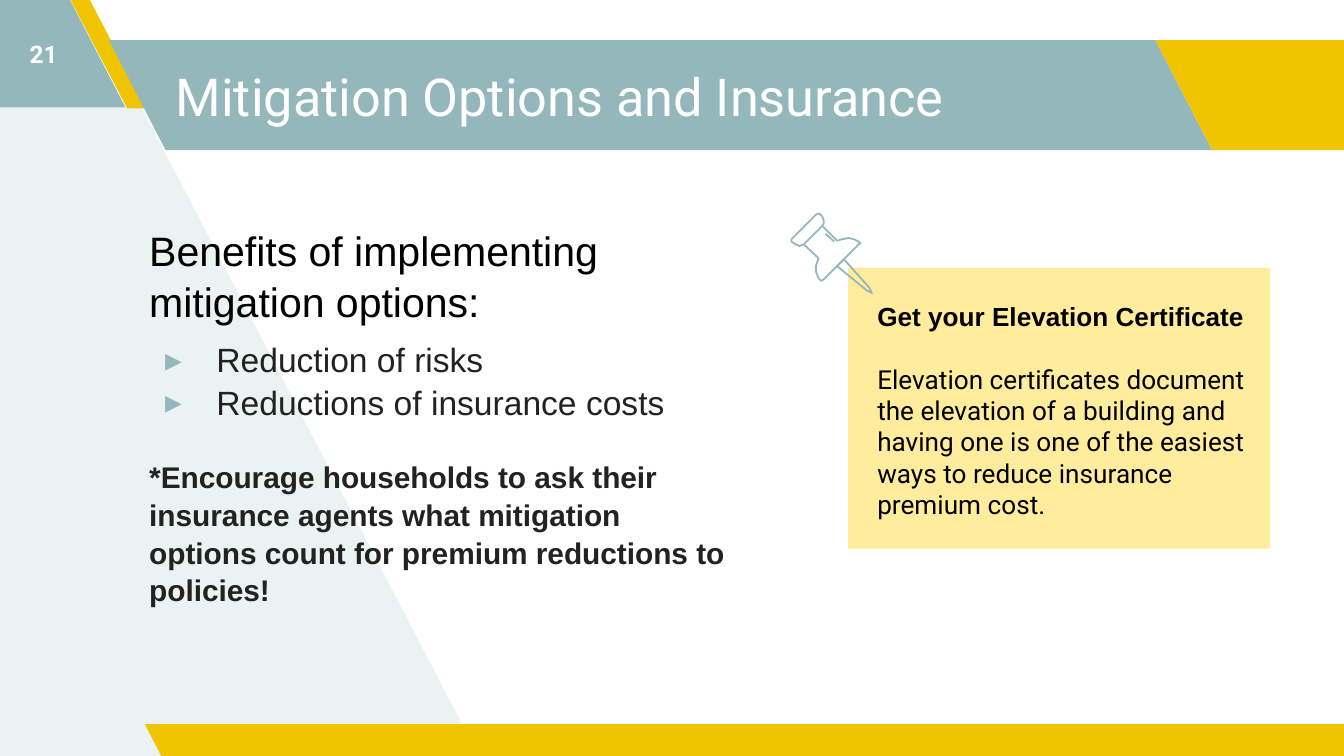
"""Build the slide on mitigation options and insurance."""
import lxml.etree
import pptx
import pptx.dml.color
import pptx.enum.shapes
import pptx.enum.text
import pptx.oxml.ns
import pptx.util

Cm = pptx.util.Cm
Pt = pptx.util.Pt
RGBColor = pptx.dml.color.RGBColor
qn = pptx.oxml.ns.qn

TEAL = RGBColor(0x94, 0xB7, 0xBB)
PIN_TEAL = RGBColor(0x94, 0xB8, 0xBD)
GOLD = RGBColor(0xF1, 0xC4, 0x00)
NOTE_YELLOW = RGBColor(0xFF, 0xEC, 0x9D)
WHITE = RGBColor(0xFF, 0xFF, 0xFF)
BLACK = RGBColor(0x00, 0x00, 0x00)
CHARCOAL = RGBColor(0x22, 0x22, 0x22)


def draw_outline(shapes, points, closed):
    builder = shapes.build_freeform(*points[0], scale=Cm(0.01))
    builder.add_line_segments(points[1:], close=closed)
    outline = builder.convert_to_shape()
    outline.shadow.inherit = False
    return outline


def format_text(paragraph, font_name, size, color, bold=False):
    for run in paragraph.runs:
        run.font.name = font_name
        run.font.size = Pt(size)
        run.font.color.rgb = color
        run.font.bold = bold


deck = pptx.Presentation()
deck.slide_width = Cm(25.4)
deck.slide_height = Cm(14.29)
slide = deck.slides.add_slide(deck.slide_layouts[1])
shapes = slide.shapes

wedge = draw_outline(shapes, [(904, 1428), (157, -10), (-15, -10), (-5, 1438)], True)
wedge.fill.solid()
wedge.fill.fore_color.rgb = TEAL
wedge.line.fill.background()
wedge_color = wedge.fill._xPr.find(qn("a:solidFill"))[0]
lxml.etree.SubElement(wedge_color, qn("a:alpha"), val="18000")

bands = [
    (-2.51, -0.05, 4.88, 2.08, 0.515, TEAL),
    (1.32, -0.03, 1.45, 2.08, 0.75, GOLD),
    (2.06, 0.76, 20.85, 2.08, 0.515, TEAL),
    (21.84, 0.76, 4.88, 2.08, 0.515, GOLD),
    (2.74, 13.69, 23.24, 0.64, 0.515, GOLD),
]
for left, top, width, height, slant, color in bands:
    band = shapes.add_shape(
        pptx.enum.shapes.MSO_SHAPE.PARALLELOGRAM,
        Cm(left), Cm(top), Cm(width), Cm(height))
    band.adjustments[0] = slant
    band.element.spPr.find(qn("a:xfrm")).set("flipH", "1")
    band.shadow.inherit = False
    band.fill.solid()
    band.fill.fore_color.rgb = color
    band.line.fill.background()

title = shapes.title
benefits = slide.placeholders[1]
for placeholder in (title, benefits):
    shapes.element.append(placeholder.element)

page_number = shapes.add_textbox(Cm(0), Cm(0), Cm(1.65), Cm(2.03))

certificate_card = shapes.add_shape(
    pptx.enum.shapes.MSO_SHAPE.RECTANGLE, Cm(16.03), Cm(5.06), Cm(7.97), Cm(5.31))
certificate_card.shadow.inherit = False
certificate_card.fill.solid()
certificate_card.fill.fore_color.rgb = NOTE_YELLOW
certificate_card.line.fill.background()
certificate = shapes.add_textbox(Cm(16.33), Cm(5.54), Cm(7.52), Cm(4.45))

title.left, title.top, title.width, title.height = Cm(3.07), Cm(0.76), Cm(19.79), Cm(2.08)
benefits.left, benefits.top = Cm(2.57), Cm(3.96)
benefits.width, benefits.height = Cm(11.43), Cm(7.57)

MIDDLE = pptx.enum.text.MSO_ANCHOR.MIDDLE
TOP = pptx.enum.text.MSO_ANCHOR.TOP
for box, anchor, inset in [
    (title, MIDDLE, 0.25),
    (page_number, MIDDLE, 0.25),
    (benefits, TOP, 0.25),
    (certificate, TOP, 0.13),
]:
    frame = box.text_frame
    frame.word_wrap = True
    frame.auto_size = pptx.enum.text.MSO_AUTO_SIZE.NONE
    frame.vertical_anchor = anchor
    frame.margin_left = frame.margin_right = Cm(0.25)
    frame.margin_top = frame.margin_bottom = Cm(inset)

title.text_frame.text = "Mitigation Options and Insurance"
title.text_frame.paragraphs[0].alignment = pptx.enum.text.PP_ALIGN.LEFT
format_text(title.text_frame.paragraphs[0], "Roboto", 28, WHITE)

page_number.text_frame.text = "21"
page_number.text_frame.paragraphs[0].alignment = pptx.enum.text.PP_ALIGN.CENTER
format_text(page_number.text_frame.paragraphs[0], "Roboto", 13, WHITE, True)

benefit_lines = [
    ("Benefits of implementing mitigation options:", 22, BLACK, False, False, 0),
    ("Reduction of risks", 18, CHARCOAL, False, True, 6),
    ("Reductions of insurance costs", 18, CHARCOAL, False, True, 0),
    ("*Encourage households to ask their insurance agents what mitigation "
     "options count for premium reductions to policies!", 16, CHARCOAL, True, False, 19),
]
benefits.text_frame.text = "\n".join(line[0] for line in benefit_lines)
for paragraph, (_, size, color, bold, bulleted, gap) in zip(
        benefits.text_frame.paragraphs, benefit_lines):
    paragraph.space_before = Pt(gap)
    paragraph.line_spacing = 1.05
    properties = paragraph._p.get_or_add_pPr()
    properties.set("marL", str(Cm(1.27) if bulleted else 0))
    properties.set("indent", str(Cm(-0.97) if bulleted else 0))
    if bulleted:
        bullet_color = lxml.etree.SubElement(properties, qn("a:buClr"))
        lxml.etree.SubElement(bullet_color, qn("a:srgbClr"), val=str(TEAL))
        lxml.etree.SubElement(properties, qn("a:buChar"), char="▸")
    else:
        lxml.etree.SubElement(properties, qn("a:buNone"))
    format_text(paragraph, "Arial", size, color, bold)

certificate.text_frame.text = (
    "Get your Elevation Certificate\n"
    "Elevation certificates document the elevation of a building and having one "
    "is one of the easiest ways to reduce insurance premium cost.")
heading, explanation = certificate.text_frame.paragraphs
format_text(heading, "Arial", 14, BLACK, True)
format_text(explanation, "Roboto", 14, BLACK)
explanation.space_before = Pt(17)

needle = [(1595, 490), (1643, 544), (1648, 554), (1638, 549), (1582, 503)]
cap = [(1554, 427), (1519, 462), (1511, 465), (1504, 462), (1496, 457), (1496, 452),
       (1544, 404), (1549, 404), (1554, 409), (1557, 417), (1557, 422)]
collar = [(1554, 427), (1582, 455), (1593, 452), (1603, 450), (1613, 452), (1623, 457),
          (1626, 460), (1623, 462), (1557, 528), (1552, 531), (1547, 526), (1542, 513),
          (1542, 503), (1547, 488), (1519, 462)]
glint = [(1577, 457), (1560, 442)]
pushpin = shapes.add_group_shape()
for points, closed in [(needle, True), (cap, True), (collar, False), (glint, False)]:
    pin_part = draw_outline(pushpin.shapes, points, closed)
    pin_part.fill.background()
    pin_part.line.color.rgb = PIN_TEAL
    pin_part.line.width = Pt(0.96)

deck.save("out.pptx")
